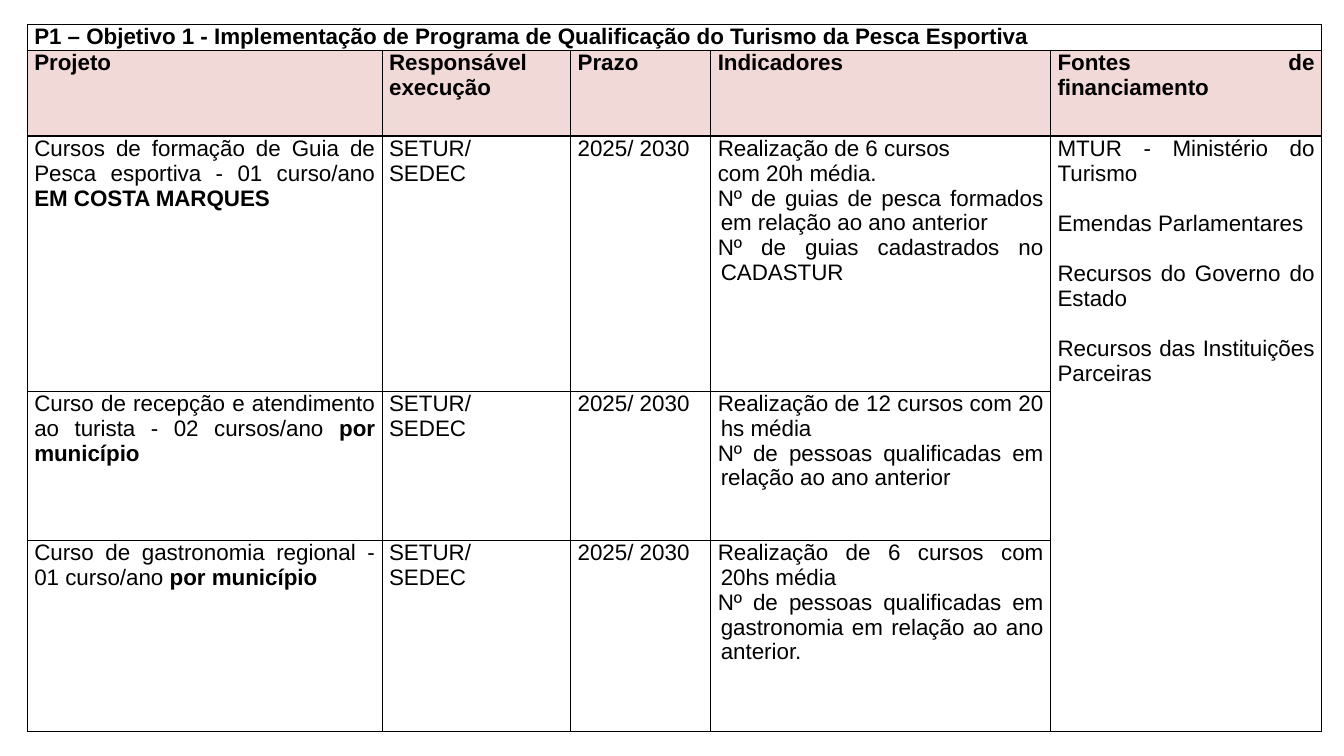
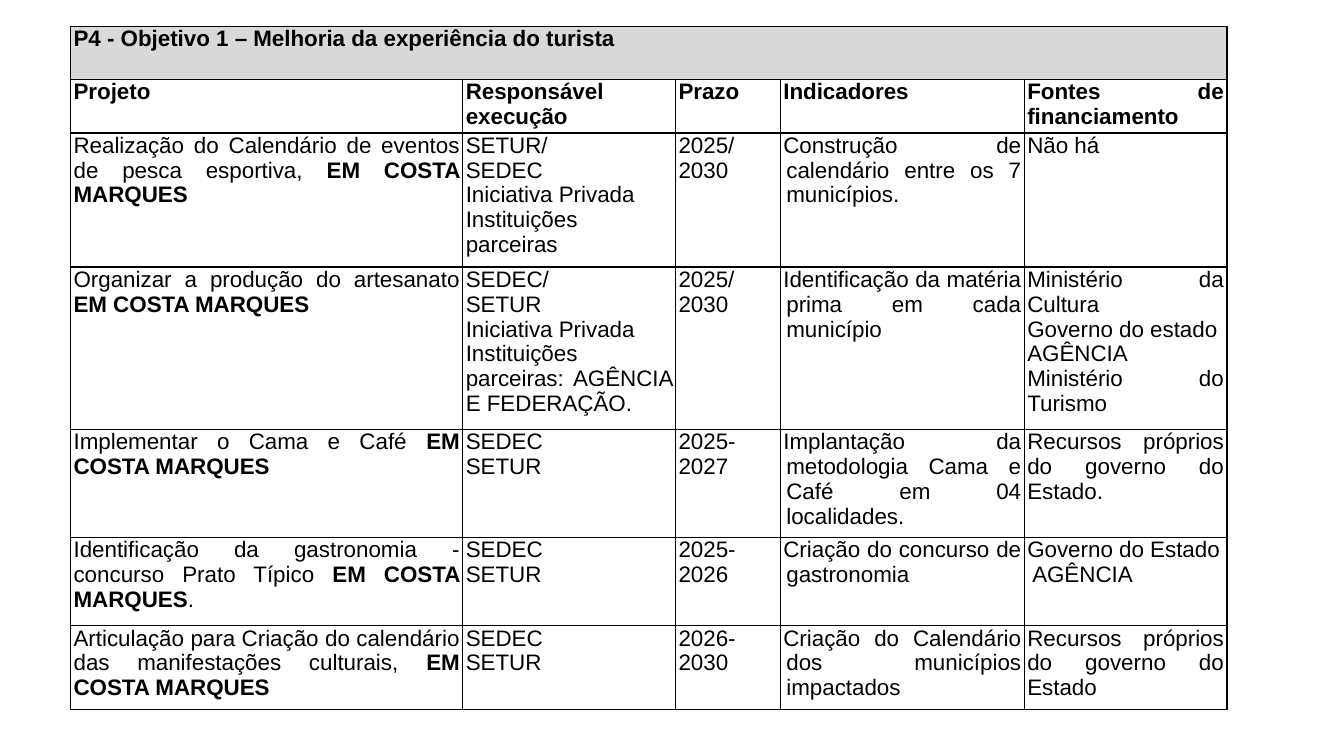
from pptx import Presentation
from pptx.dml.color import RGBColor
from pptx.enum.text import PP_ALIGN as Align
from pptx.oxml import parse_xml
from pptx.oxml.ns import nsdecls
from pptx.util import Inches, Pt

FONT, SIZE = "Arial", 16
BLACK, PINK, GREY = "000000", "F0D9D7", "D9D9D9"
HANG = 0.03
INDICATORS = 3
HEADERS = ["Projeto", "Responsável execução", "Prazo", "Indicadores",
           "Fontes de financiamento"]

TRAINING = [
    ["Cursos de formação de Guia de Pesca esportiva - 01 curso/ano *EM COSTA MARQUES*",
     "SETUR/\nSEDEC", "2025/ 2030",
     "Realização de 6 cursos\ncom 20h média.\n"
     "Nº de guias de pesca formados em relação ao ano anterior\n"
     "Nº de guias cadastrados no CADASTUR",
     "MTUR - Ministério do Turismo\nEmendas Parlamentares\n"
     "Recursos do Governo do Estado\nRecursos das Instituições Parceiras"],
    ["Curso de recepção e atendimento ao turista - 02 cursos/ano *por município*",
     "SETUR/\nSEDEC", "2025/ 2030",
     "Realização de 12 cursos com 20 hs média\n"
     "Nº de pessoas qualificadas em relação ao ano anterior"],
    ["Curso de gastronomia regional - 01 curso/ano *por município*",
     "SETUR/\nSEDEC", "2025/ 2030",
     "Realização de 6 cursos com 20hs média\n"
     "Nº de pessoas qualificadas em gastronomia em relação ao ano anterior."],
]

EXPERIENCE = [
    ["Realização do Calendário de eventos de pesca esportiva, *EM COSTA MARQUES*",
     "SETUR/\nSEDEC\nIniciativa Privada\nInstituições parceiras", "2025/\n2030",
     "Construção de calendário entre os 7 municípios.", "Não há"],
    ["Organizar a produção do artesanato *EM COSTA MARQUES*",
     "SEDEC/\nSETUR\nIniciativa Privada\nInstituições parceiras: AGÊNCIA E FEDERAÇÃO.",
     "2025/\n2030", "Identificação da matéria prima em cada município",
     "Ministério da Cultura\nGoverno do estado\nAGÊNCIA\nMinistério do Turismo"],
    ["Implementar o Cama e Café *EM COSTA MARQUES*", "SEDEC\nSETUR", "2025-2027",
     "Implantação da metodologia Cama e Café em 04 localidades.",
     "Recursos próprios do governo do Estado."],
    ["Identificação da gastronomia - concurso Prato Típico *EM COSTA MARQUES*.",
     "SEDEC\nSETUR", "2025-2026", "Criação do concurso de gastronomia",
     "Governo do Estado\n AGÊNCIA"],
    ["Articulação para Criação do calendário das manifestações culturais, "
     "*EM COSTA MARQUES*", "SEDEC\nSETUR", "2026-2030",
     "Criação do Calendário dos municípios impactados",
     "Recursos próprios do governo do Estado"],
]


def rgb(value):
    return RGBColor.from_string(value)


def add_borders(cell):
    tcPr = cell._tc.get_or_add_tcPr()
    for i, side in enumerate(("lnL", "lnR", "lnT", "lnB")):
        tcPr.insert(i, parse_xml(
            f'<a:{side} {nsdecls("a")} w="{Pt(1)}"><a:solidFill>'
            f'<a:srgbClr val="{BLACK}"/></a:solidFill></a:{side}>'))


def style_cell(cell, inset, fill=None):
    cell.margin_left = cell.margin_right = Inches(inset)
    cell.margin_top = cell.margin_bottom = 0
    if fill:
        cell.fill.solid()
        cell.fill.fore_color.rgb = rgb(fill)
    else:
        cell.fill.background()
    add_borders(cell)


def write_cell(cell, text, bold=False, hang=0, gap=0):
    tf = cell.text_frame
    for i, line in enumerate(text.split("\n")):
        p = tf.add_paragraph() if i else tf.paragraphs[0]
        p.alignment = Align.JUSTIFY
        if i and gap:
            p.space_before = Pt(gap)
        if hang:
            pPr = p._p.get_or_add_pPr()
            pPr.set("marL", str(Inches(hang)))
            pPr.set("indent", str(-Inches(hang)))
        for j, part in enumerate(line.split("*")):
            if part:
                r = p.add_run()
                r.text = part
                r.font.name, r.font.size = FONT, Pt(SIZE)
                r.font.bold = bold or j % 2 == 1
                r.font.color.rgb = rgb(BLACK)


def add_plan(prs, left, top, widths, heights, title, body, inset,
             title_fill=None, header_fill=None, shared_funding=False):
    s = prs.slides.add_slide(prs.slide_layouts[6])
    table = s.shapes.add_table(
        len(heights), len(widths), Inches(left), Inches(top),
        Inches(sum(widths)), Inches(sum(heights))).table
    table.first_row = table.horz_banding = False
    for column, width in zip(table.columns, widths):
        column.width = Inches(width)
    fills = [title_fill, header_fill] + [None] * len(body)
    for i, (row, height) in enumerate(zip(table.rows, heights)):
        row.height = Inches(height)
        for cell in row.cells:
            style_cell(cell, inset, fills[i])

    last = len(widths) - 1
    table.cell(0, 0).merge(table.cell(0, last))
    if shared_funding:
        table.cell(2, last).merge(table.cell(len(heights) - 1, last))
    write_cell(table.cell(0, 0), title, bold=True)
    for c, text in enumerate(HEADERS):
        write_cell(table.cell(1, c), text, bold=True)
    for i, values in enumerate(body, 2):
        for c, text in enumerate(values):
            write_cell(table.cell(i, c), text,
                       hang=HANG if c == INDICATORS else 0,
                       gap=18 if shared_funding and c == last else 0)


def main():
    prs = Presentation()
    prs.slide_width, prs.slide_height = Inches(13.33), Inches(7.5)
    add_plan(prs, 0.27, 0.24, [3.52, 1.87, 1.39, 3.37, 2.69],
             [0.26, 0.85, 2.53, 1.48, 1.9],
             "P1 – Objetivo 1 - Implementação de Programa de Qualificação "
             "do Turismo da Pesca Esportiva",
             TRAINING, 0.07, header_fill=PINK, shared_funding=True)
    add_plan(prs, 0.7, 0.26, [3.89, 2.11, 1.04, 2.42, 2.01],
             [0.53, 0.53, 1.33, 1.61, 1.07, 0.88, 0.83],
             "P4 - Objetivo 1 – Melhoria da experiência do turista",
             EXPERIENCE, 0.03, title_fill=GREY)
    prs.save("out.pptx")


if __name__ == "__main__":
    main()
